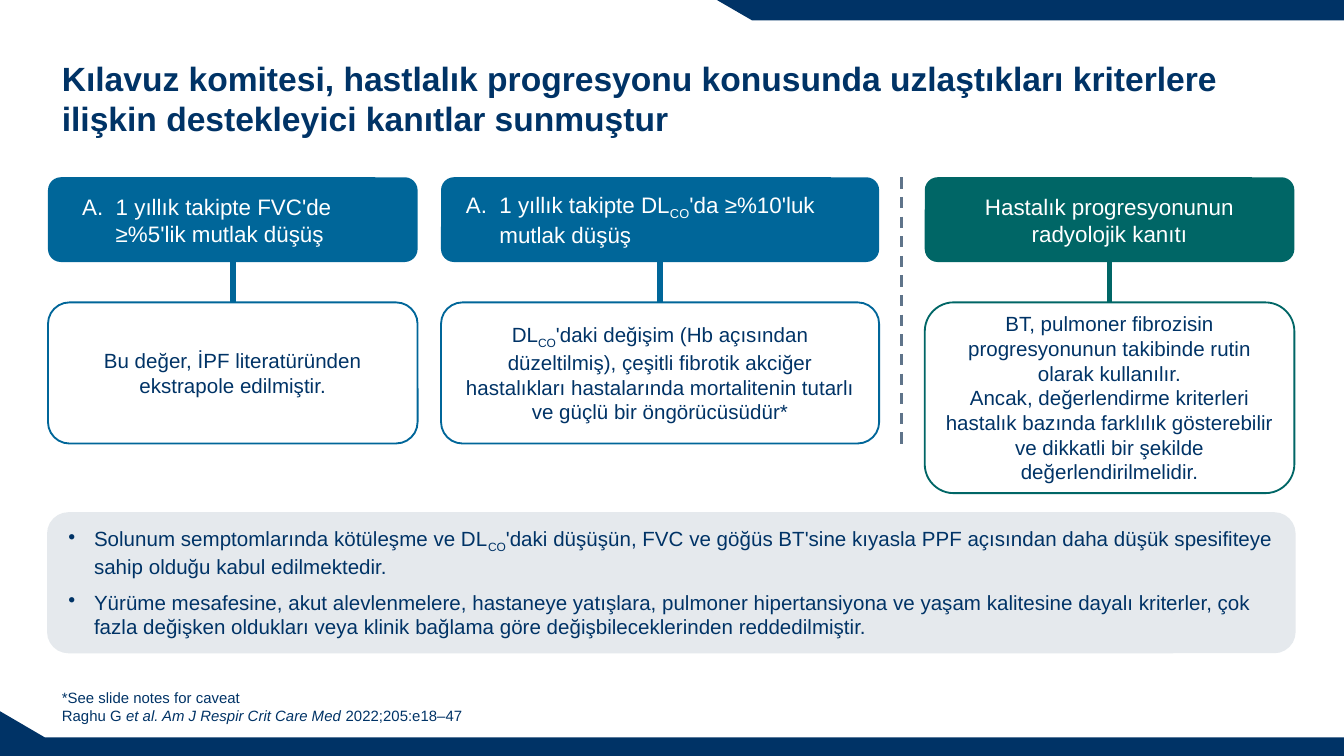
import pptx
import pptx.dml.color
import pptx.enum.dml
import pptx.enum.shapes
import pptx.enum.text
import pptx.oxml.ns
import lxml.etree

Pt = pptx.util.Pt
SHAPES = pptx.enum.shapes.MSO_SHAPE
ALIGN = pptx.enum.text.PP_ALIGN
ANCHOR = pptx.enum.text.MSO_ANCHOR

NAVY, BLUE, GREEN, PALE, GREY, WHITE = "003366", "006699", "006666", "E5E9ED", "5F748A", "FFFFFF"
FONT = "Arial"
SUBSCRIPT, ITALIC = "subscript", "italic"

TITLE = "Kılavuz komitesi, hastlalık progresyonu konusunda uzlaştıkları kriterlere ilişkin destekleyici kanıtlar sunmuştur"
FOOTNOTE = [("*See slide notes for caveat",), ("\n",), ("Raghu G ",),
            ("et al. Am J Respir Crit Care Med ", ITALIC), ("2022;205:e18–47",)]
COLUMNS = [
    {"left": 25.7, "width": 198, "height": 75.6, "inset": 9.7, "color": BLUE, "lettered": True,
     "header": [("1 yıllık takipte FVC'de ≥%5'lik mutlak düşüş",)],
     "body": [[("Bu değer, İPF literatüründen ekstrapole edilmiştir.",)]]},
    {"left": 236.3, "width": 234.7, "height": 75.6, "inset": 4.7, "color": BLUE, "lettered": True,
     "header": [("1 yıllık takipte DL",), ("CO", SUBSCRIPT), ("'da ≥%10'luk mutlak düşüş",)],
     "body": [[("DL",), ("CO", SUBSCRIPT),
               ("'daki değişim (Hb açısından düzeltilmiş), çeşitli fibrotik akciğer hastalıkları hastalarında mortalitenin tutarlı ve güçlü bir öngörücüsüdür*",)]]},
    {"left": 495.4, "width": 198, "height": 102.2, "inset": 4.3, "color": GREEN, "lettered": False,
     "header": [("Hastalık progresyonunun radyolojik kanıtı",)],
     "body": [[("BT, pulmoner fibrozisin progresyonunun takibinde rutin olarak kullanılır.",)],
              [("Ancak, değerlendirme kriterleri hastalık bazında farklılık gösterebilir ve dikkatli bir şekilde değerlendirilmelidir.",)]]},
]
REMARKS = [
    [("Solunum semptomlarında kötüleşme ve DL",), ("CO", SUBSCRIPT),
     ("'daki düşüşün, FVC ve göğüs BT'sine kıyasla PPF açısından daha düşük spesifiteye sahip olduğu kabul edilmektedir.",)],
    [("Yürüme mesafesine, akut alevlenmelere, hastaneye yatışlara, pulmoner hipertansiyona ve yaşam kalitesine dayalı kriterler, çok fazla değişken oldukları veya klinik bağlama göre değişbileceklerinden reddedilmiştir.",)],
]
BANDS = [
    [(384.5, 0), (720, 0), (720, 10.8), (403.2, 10.8)],
    [(0, 380.9), (23.8, 394.6), (720, 394.6), (720, 405), (0, 405)],
]
HEADER_TOP, HEADER_HEIGHT, BODY_TOP = 95, 45.4, 162


def rgb(value):
    return pptx.dml.color.RGBColor.from_string(value)


def paint(shape, fill=None, line=None):
    shape.shadow.inherit = False
    if fill:
        shape.fill.solid()
        shape.fill.fore_color.rgb = rgb(fill)
    else:
        shape.fill.background()
    if line:
        shape.line.color.rgb = rgb(line)
        shape.line.width = Pt(1)
    else:
        shape.line.fill.background()


def add_box(shapes, kind, left, top, width, height, fill=None, line=None):
    shape = shapes.add_shape(kind, Pt(left), Pt(top), Pt(width), Pt(height))
    if kind == SHAPES.ROUNDED_RECTANGLE:
        shape.adjustments[0] = 0.152
    paint(shape, fill, line)
    return shape


def add_line(shapes, x, top, bottom, color, width):
    line = shapes.add_connector(pptx.enum.shapes.MSO_CONNECTOR.STRAIGHT, Pt(x), Pt(top), Pt(x), Pt(bottom))
    line.line.color.rgb = rgb(color)
    line.line.width = Pt(width)
    lxml.etree.SubElement(line._element.spPr, pptx.oxml.ns.qn("a:effectLst"))
    return line


def set_bullet(paragraph, tag, indent=0, **attributes):
    properties = paragraph._p.get_or_add_pPr()
    properties.set("marL", str(Pt(indent)))
    properties.set("indent", str(-Pt(indent)))
    lxml.etree.SubElement(properties, pptx.oxml.ns.qn(tag), attributes)


def write(shape, paragraphs, size, color, align=ALIGN.LEFT, anchor=ANCHOR.MIDDLE,
          side=7.2, before=0, after=0, bold=False):
    frame = shape.text_frame
    frame.word_wrap = True
    frame.auto_size = pptx.enum.text.MSO_AUTO_SIZE.NONE
    frame.vertical_anchor = anchor
    frame.margin_left = frame.margin_right = Pt(side)
    frame.margin_top = frame.margin_bottom = Pt(3.6)
    for index, pieces in enumerate(paragraphs):
        paragraph = frame.add_paragraph() if index else frame.paragraphs[0]
        paragraph.alignment = align
        paragraph.line_spacing = 1.0
        paragraph.space_before, paragraph.space_after = Pt(before), Pt(after)
        for text, *styles in pieces:
            if text == "\n":
                paragraph.add_line_break()
                continue
            run = paragraph.add_run()
            run.text = text
            font = run.font
            font.name, font.size, font.bold = FONT, Pt(size), bold
            font.italic = ITALIC in styles
            font.color.rgb = rgb(color)
            if SUBSCRIPT in styles:
                font._element.set("baseline", "-25000")
    return frame.paragraphs


def place(placeholder, left, top, width, height):
    placeholder.left, placeholder.top = Pt(left), Pt(top)
    placeholder.width, placeholder.height = Pt(width), Pt(height)


def add_column(slide, column):
    shapes = slide.shapes.add_group_shape().shapes
    left, width, color, inset = (column[key] for key in ("left", "width", "color", "inset"))
    body = add_box(shapes, SHAPES.ROUNDED_RECTANGLE, left, BODY_TOP, width, column["height"], line=color)
    write(body, column["body"], 11, NAVY, ALIGN.CENTER, side=5.8)
    add_box(shapes, SHAPES.ROUNDED_RECTANGLE, left, HEADER_TOP, width, HEADER_HEIGHT, fill=color)
    label = add_box(shapes, SHAPES.RECTANGLE, left + inset, HEADER_TOP + 4.3,
                    width - 2 * inset, HEADER_HEIGHT - 8.6, fill=color)
    align = ALIGN.LEFT if column["lettered"] else ALIGN.CENTER
    paragraphs = write(label, [column["header"]], 12, WHITE, align, side=8.6, after=6)
    if column["lettered"]:
        set_bullet(paragraphs[0], "a:buAutoNum", 18, type="alphaUcPeriod")
    add_line(shapes, left + width / 2, HEADER_TOP + HEADER_HEIGHT, BODY_TOP, color, 3)


def add_remarks(slide):
    shapes = slide.shapes.add_group_shape().shapes
    add_box(shapes, SHAPES.ROUNDED_RECTANGLE, 25.2, 274.4, 668.9, 75.6, fill=PALE)
    text_box = shapes.add_textbox(Pt(28.1), Pt(278.6), Pt(663.1), Pt(67))
    for paragraph in write(text_box, REMARKS, 11, NAVY, side=8.6, after=6):
        set_bullet(paragraph, "a:buChar", 13.7, char="•")


def main():
    presentation = pptx.Presentation()
    presentation.slide_width, presentation.slide_height = Pt(720), Pt(405)
    slide = presentation.slides.add_slide(presentation.slide_layouts[1])
    for start, *rest in BANDS:
        builder = slide.shapes.build_freeform(*start, scale=Pt(1))
        builder.add_line_segments(rest)
        paint(builder.convert_to_shape(), NAVY)
    add_remarks(slide)

    title, footnote = slide.placeholders
    place(title, 25.9, 21.6, 667.4, 56.2)
    write(title, [[(TITLE,)]], 18, NAVY, anchor=ANCHOR.BOTTOM, bold=True)
    place(footnote, 25.9, 370, 627, 21.6)
    paragraphs = write(footnote, [FOOTNOTE], 8, NAVY, anchor=ANCHOR.BOTTOM, before=3, after=3)
    set_bullet(paragraphs[0], "a:buNone")

    divider = add_line(slide.shapes, 483.1, HEADER_TOP, 237.6, GREY, 1.5)
    divider.line.dash_style = pptx.enum.dml.MSO_LINE.DASH
    for column in COLUMNS:
        add_column(slide, column)
    presentation.save("out.pptx")


if __name__ == "__main__":
    main()
